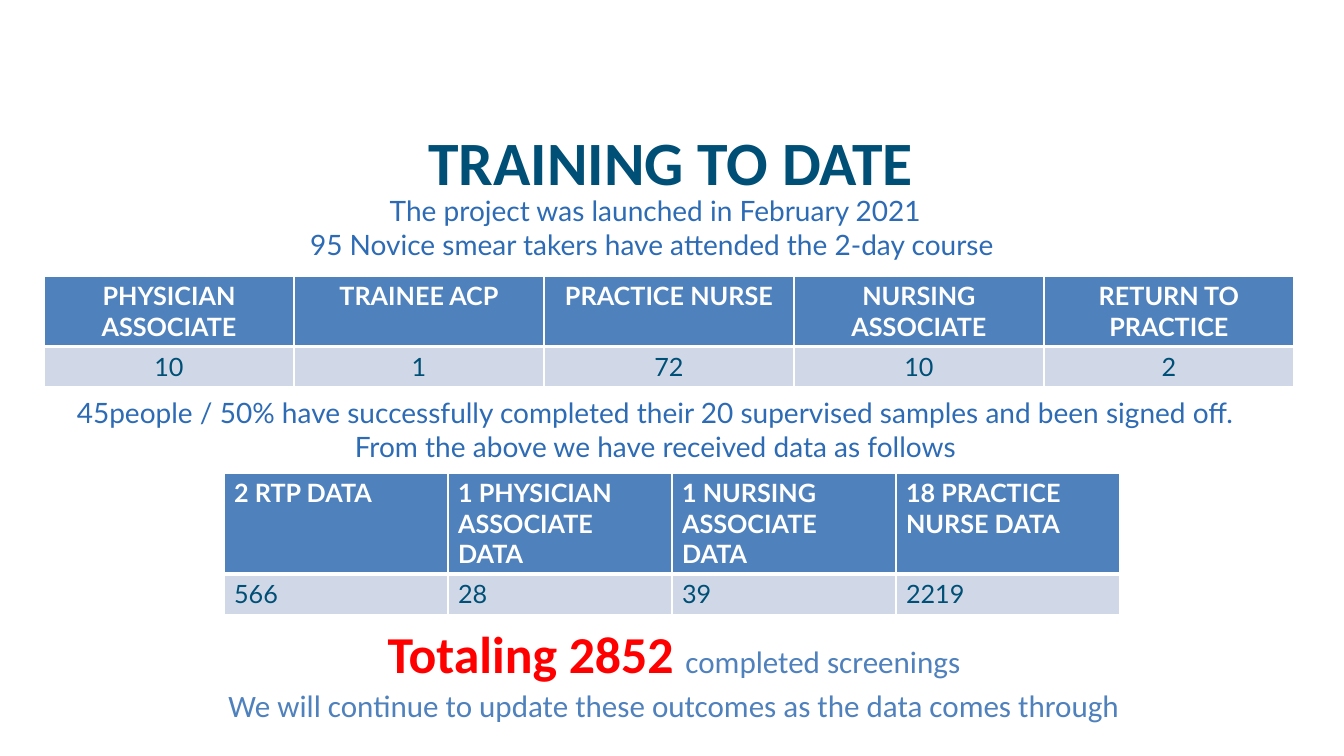
import pptx
import pptx.dml.color
import pptx.enum.text
import pptx.oxml
import pptx.oxml.ns
import pptx.util

RGB = pptx.dml.color.RGBColor
ALIGN = pptx.enum.text.PP_ALIGN
ANCHOR = pptx.enum.text.MSO_ANCHOR

NAVY = RGB(0x00, 0x4F, 0x76)
BLUE = RGB(0x2D, 0x6B, 0xB5)
HEADER_BLUE = RGB(0x4F, 0x81, 0xBD)
PALE_BLUE = RGB(0xD0, 0xD8, 0xE8)
RED = RGB(0xFF, 0x00, 0x00)
WHITE = RGB(0xFF, 0xFF, 0xFF)

TITLE = ("Calibri", 44, NAVY, True)
BODY = ("Lato", 20, BLUE, False)
TOTAL = ("Calibri", 37, RED, True)
CLOSING = ("Calibri", 22.2, HEADER_BLUE, False)
HEADER_CELL = ("Lato", 18, WHITE, True)
VALUE_CELL = ("Lato", 18, NAVY, False)

TEXT_BOXES = [
    ((12, 98, 1318, 125), ANCHOR.MIDDLE, [[("TRAINING TO DATE", TITLE)]]),
    ((12, 189, 1287, 77), ANCHOR.TOP, [
        [("The project was launched in February 2021", BODY)],
        [("95 Novice smear takers have attended the 2-day course ", BODY)],
    ]),
    ((12, 391, 1287, 77), ANCHOR.TOP, [
        [("45people / 50% have successfully completed their 20 supervised "
          "samples and been signed off.", BODY)],
        [("From the above we have received data as follows", BODY)],
    ]),
    ((71, 617, 1206, 115), ANCHOR.TOP, [
        [("Totaling 2852 ", TOTAL), ("completed screenings", CLOSING)],
        [("We will continue to update these outcomes as the data comes through", CLOSING)],
    ]),
]

TABLES = [
    ((44, 276), 250, (70, 40), ALIGN.CENTER, [
        ["PHYSICIAN ASSOCIATE", "TRAINEE ACP", "PRACTICE NURSE",
         "NURSING ASSOCIATE", "RETURN TO PRACTICE"],
        ["10", "1", "72", "10", "2"],
    ]),
    ((224, 473), 224, (100, 40), ALIGN.LEFT, [
        ["2 RTP DATA", "1 PHYSICIAN ASSOCIATE DATA",
         "1 NURSING ASSOCIATE DATA", "18 PRACTICE NURSE DATA"],
        ["566", "28", "39", "2219"],
    ]),
]

ROW_STYLES = [
    (HEADER_CELL, HEADER_BLUE, {"lnL": 1, "lnR": 1, "lnT": 1, "lnB": 3}),
    (VALUE_CELL, PALE_BLUE, {"lnL": 1, "lnR": 1, "lnT": 3, "lnB": 1}),
]


def px(length):
    return pptx.util.Emu(round(length * 914400 / 100.8))


def set_font(font, style):
    font.name, size, color, font.bold = style
    font.size = pptx.util.Pt(size)
    font.color.rgb = color


def add_text(page, area, anchor, lines):
    frame = page.shapes.add_textbox(*map(px, area)).text_frame
    frame.word_wrap = True
    frame.vertical_anchor = anchor
    for index, spans in enumerate(lines):
        para = frame.add_paragraph() if index else frame.paragraphs[0]
        para.alignment = ALIGN.CENTER
        if index and spans[0][1] is CLOSING:
            para.space_before = pptx.util.Pt(2)
        if len(spans) == 1:
            para.text = spans[0][0]
            set_font(para.font, spans[0][1])
        else:
            for text, style in spans:
                span = para.add_run()
                span.text = text
                set_font(span.font, style)


def add_borders(cell, weights):
    properties = cell._tc.get_or_add_tcPr()
    for side, weight in weights.items():
        properties.append(pptx.oxml.parse_xml(
            f'<a:{side} {pptx.oxml.ns.nsdecls("a")} w="{pptx.util.Pt(weight)}">'
            f'<a:solidFill><a:srgbClr val="{WHITE}"/></a:solidFill></a:{side}>'))


def add_data_table(page, corner, column_width, row_heights, alignment, rows):
    size = (column_width * len(rows[0]), sum(row_heights))
    table = page.shapes.add_table(len(rows), len(rows[0]), *map(px, corner + size)).table
    for column in table.columns:
        column.width = px(column_width)
    for row_index, (style, fill, borders) in enumerate(ROW_STYLES):
        table.rows[row_index].height = px(row_heights[row_index])
        for column_index, text in enumerate(rows[row_index]):
            cell = table.cell(row_index, column_index)
            add_borders(cell, borders)
            cell.fill.solid()
            cell.fill.fore_color.rgb = fill
            para = cell.text_frame.paragraphs[0]
            para.text = text
            para.alignment = alignment
            set_font(para.font, style)


def main():
    deck = pptx.Presentation()
    deck.slide_width, deck.slide_height = px(1344), px(756)
    page = deck.slides.add_slide(deck.slide_layouts[6])
    for text_box in TEXT_BOXES:
        add_text(page, *text_box)
    for data_table in TABLES:
        add_data_table(page, *data_table)
    deck.save("out.pptx")


if __name__ == "__main__":
    main()
